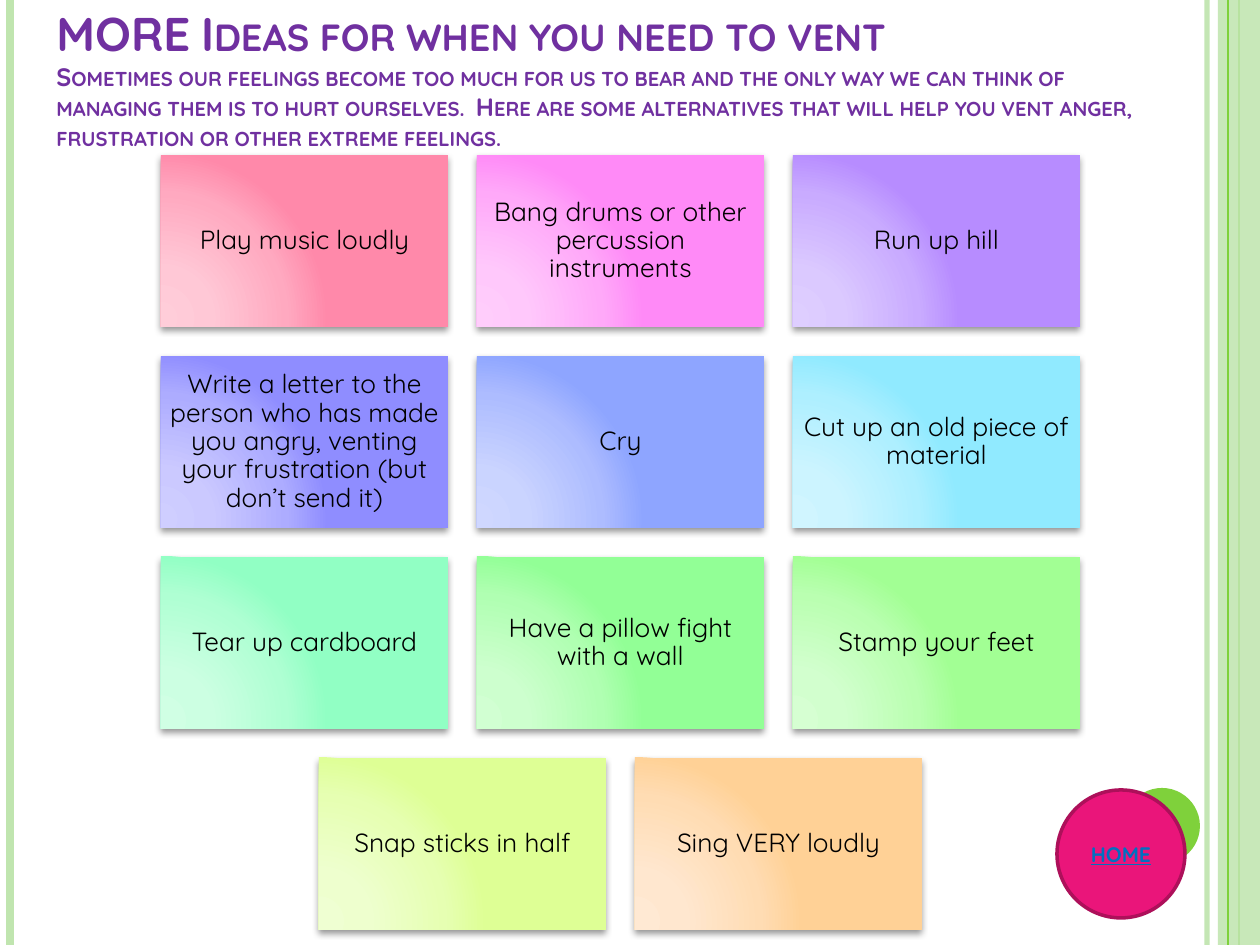
from lxml import etree
from pptx import Presentation
from pptx.dml.color import RGBColor
from pptx.enum.shapes import MSO_CONNECTOR, MSO_SHAPE
from pptx.enum.text import MSO_ANCHOR, PP_ALIGN
from pptx.oxml.ns import qn
from pptx.util import Pt

SCALE = 914400 / 126
RECT, OVAL = MSO_SHAPE.RECTANGLE, MSO_SHAPE.OVAL
LINE = MSO_CONNECTOR.STRAIGHT
MIDDLE, BOTTOM = MSO_ANCHOR.MIDDLE, MSO_ANCHOR.BOTTOM
CENTER, LEFT = PP_ALIGN.CENTER, PP_ALIGN.LEFT

COLORS = {
    "pale": "C0E5AF", "green": "7FD13B", "title": "7030A0", "text": "000000",
    "pink": "EA157A", "rim": "AD105A", "home": "0070C0",
}
FORMATS = {
    "head": {"size": Pt(27), "bold": True},
    "intro": {"size": Pt(14.4), "bold": True},
    "card": {"size": Pt(15)},
    "home": {"size": Pt(12), "bold": True, "underline": True},
}
# Position in percent and share of the deep colour
STOPS = [(0, 0), (30, 0.07), (75, 0.53), (100, 1)]

TITLE = "MORE Ideas for when you need to vent"
INTRO = ("Sometimes our feelings become too much for us to bear and the only "
         "way we can think of managing them is to hurt ourselves.  Here are "
         "some alternatives that will help you vent anger, frustration or "
         "other extreme feelings.")
# Each card: text, light colour, deep colour
ROWS = [
    [("Play music loudly", "FFCDD9", "FF89AA"),
     ("Bang drums or other percussion instruments", "FFCDFB", "FF8AF7"),
     ("Run up hill", "DECEFF", "B78CFF")],
    [("Write a letter to the person who has made you angry, venting your "
      "frustration (but don’t send it)", "CFCEFF", "8F8DFF"),
     ("Cry", "CFD7FF", "8EA5FF"),
     ("Cut up an old piece of material", "D0F5FF", "90EAFF")],
    [("Tear up cardboard", "D0FFE4", "91FFC4"),
     ("Have a pillow fight with a wall", "D1FFD2", "92FF96"),
     ("Stamp your feet", "D6FFD2", "A2FF94")],
    [("Snap sticks in half", "EFFFD2", "DEFF95"),
     ("Sing VERY loudly", "FFE9D3", "FFD196")],
]
CARD_W, CARD_H, GAP = 287, 172, 29
MID_X, TOP = 620, 155


def px(n):
    return round(n * SCALE)


def add(parent, tag, **attrs):
    values = {key: str(value) for key, value in attrs.items()}
    return etree.SubElement(parent, qn(tag), values)


def fade(part, alpha):
    """Make the first colour inside part see-through."""
    color = next(part.iter(qn("a:srgbClr")))
    add(color, "a:alpha", val=alpha * 1000)


def blend(light, deep, share):
    pairs = zip(bytes.fromhex(light), bytes.fromhex(deep))
    return "".join(f"{round(a + (b - a) * share):02X}" for a, b in pairs)


class Deck:
    font = "Quicksand"

    def __init__(self):
        self.prs = Presentation()
        self.prs.slide_width, self.prs.slide_height = px(1260), px(945)
        self.slide = self.prs.slides.add_slide(self.prs.slide_layouts[6])

    def rule(self, x, color, width, alpha=100):
        """Draw a vertical line down the whole slide."""
        line = self.slide.shapes.add_connector(
            LINE, px(x), 0, px(x), self.prs.slide_height)
        line.line.color.rgb = RGBColor.from_string(COLORS[color])
        line.line.width = Pt(width)
        props = line._element.spPr
        if alpha < 100:
            fade(props, alpha)
        add(props, "a:effectLst")

    def shape(self, kind, box, fill=None, rim=None, alpha=100):
        shape = self.slide.shapes.add_shape(kind, *map(px, box))
        shape.shadow.inherit = False
        if fill:
            shape.fill.solid()
            shape.fill.fore_color.rgb = RGBColor.from_string(COLORS[fill])
        if alpha < 100:
            fade(shape._element.spPr, alpha)
        if rim:
            shape.line.color.rgb = RGBColor.from_string(COLORS[rim])
            shape.line.width = Pt(2)
        else:
            shape.line.fill.background()
        return shape

    def frame(self, shape, anchor, align):
        """Set up the text of a shape and return its paragraph."""
        frame = shape.text_frame
        frame.word_wrap = True
        frame.vertical_anchor = anchor
        para = frame.paragraphs[0]
        para.alignment = align
        return para

    def run(self, para, text, style, color):
        run = para.add_run()
        run.text = text
        run.font.name = self.font
        run.font.color.rgb = RGBColor.from_string(COLORS[color])
        for key, value in FORMATS[style].items():
            setattr(run.font, key, value)
        return run

    def title(self, box, head, intro):
        text = self.slide.shapes.add_textbox(*map(px, box))
        para = self.frame(text, BOTTOM, LEFT)
        runs = [self.run(para, head, "head", "title")]
        para.add_line_break()
        runs.append(self.run(para, intro, "intro", "title"))
        for run in runs:
            run._r.get_or_add_rPr().set("cap", "small")

    def card(self, box, text, light, deep):
        card = self.shape(RECT, box)
        card.fill.gradient()
        props = card._element.spPr
        grad = props.find(qn("a:gradFill"))
        for child in list(grad):
            grad.remove(child)
        stops = add(grad, "a:gsLst")
        for pos, share in STOPS:
            stop = add(stops, "a:gs", pos=pos * 1000)
            add(stop, "a:srgbClr", val=blend(light, deep, share))
        ring = add(grad, "a:path", path="circle")
        add(ring, "a:fillToRect", l=5000, t=100000, r=120000, b=10000)
        shade = add(props.find(qn("a:effectLst")), "a:outerShdw",
                    blurRad=Pt(4), dist=Pt(2), dir=5400000, rotWithShape=0)
        add(shade, "a:srgbClr", val=COLORS["text"])
        fade(shade, 40)
        para = self.frame(card, MIDDLE, CENTER)
        for side in ("left", "top", "right", "bottom"):
            setattr(card.text_frame, f"margin_{side}", px(8))
        para.line_spacing = 0.9
        self.run(para, text, "card", "text")

    def button(self, box, text):
        shape = self.shape(OVAL, box, "pink", "rim")
        para = self.frame(shape, MIDDLE, CENTER)
        self.run(para, text, "home", "home")


def main():
    deck = Deck()
    deck.rule(1207, "pale", 3, 93)
    deck.rule(10, "pale", 4.5)
    deck.rule(1239, "green", 1.5)
    deck.shape(RECT, (1218, 0, 42, 945), "pale", alpha=87)
    deck.rule(1228, "green", 0.75)
    deck.shape(OVAL, (1124, 788, 76, 76), "green")
    deck.title((44, 0, 1142, 158), TITLE, INTRO)
    for r, row in enumerate(ROWS):
        wide = len(row) * (CARD_W + GAP) - GAP
        for c, card in enumerate(row):
            x = MID_X - wide // 2 + c * (CARD_W + GAP)
            y = TOP + r * (CARD_H + GAP)
            deck.card((x, y, CARD_W, CARD_H), *card)
    deck.button((1057, 790, 128, 128), "HOME")
    deck.prs.save("out.pptx")


if __name__ == "__main__":
    main()
